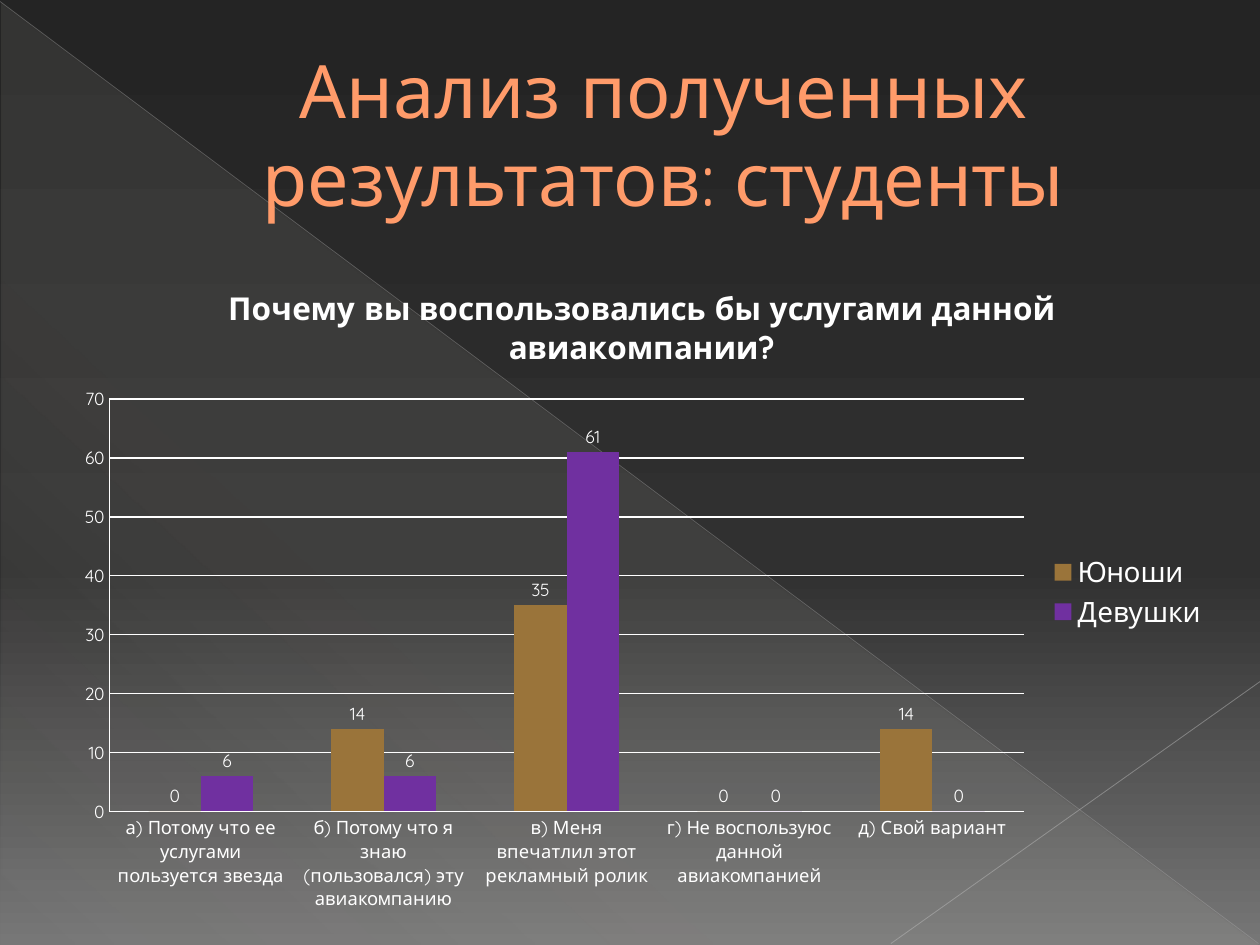
from dataclasses import dataclass

from lxml.etree import SubElement
from pptx import Presentation
from pptx.chart.data import CategoryChartData
from pptx.dml.color import RGBColor
from pptx.enum.chart import XL_CHART_TYPE as ChartType
from pptx.enum.chart import XL_LABEL_POSITION as LabelPosition
from pptx.enum.chart import XL_LEGEND_POSITION as LegendPosition
from pptx.enum.chart import XL_TICK_MARK as TickMark
from pptx.enum.shapes import MSO_CONNECTOR as Connector
from pptx.enum.shapes import MSO_SHAPE as Shape
from pptx.enum.text import MSO_ANCHOR as Anchor
from pptx.enum.text import MSO_AUTO_SIZE as AutoSize
from pptx.enum.text import PP_ALIGN as Align
from pptx.oxml.ns import qn
from pptx.util import Cm, Pt


@dataclass(frozen=True)
class Theme:
    """Colours, font and type sizes of the slide."""

    font: str = "Quicksand"
    title: str = "FF9B6A"
    title_outline: str = "A65806"
    text: str = "FFFFFF"
    beam: str = "E3DED1"
    title_size: float = 42
    chart_title_size: float = 18
    legend_size: float = 16
    category_size: float = 10.5
    chart_size: float = 10


THEME = Theme()
BACKGROUND = [(0, "242424", 100), (60, "303030", 100), (100, "767676", 100)]
BEAM = [(0, THEME.beam, 10), (70, THEME.beam, 8), (100, THEME.beam, 1)]
RAYS = [
    ((0, 0.03), (25.37, 19.02), "B6B6B6", 0.39, 35),
    ((25.4, 13.74), (17.96, 19.02), "BFBFBF", 0.47, 45),
]
CATEGORIES = [
    "а) Потому что ее услугами пользуется звезда",
    "б) Потому что я знаю (пользовался) эту авиакомпанию",
    "в) Меня впечатлил этот рекламный ролик",
    "г) Не воспользуюс данной авиакомпанией",
    "д) Свой вариант",
]
SERIES = [
    ("Юноши", (0, 14, 35, 0, 14), "9A743A"),
    ("Девушки", (6, 6, 61, 0, 0), "7030A0"),
]
PLOT_AREA = {"x": 0.04, "y": 0.21, "w": 0.79, "h": 0.62}


def set_attributes(target, values):
    """Set every named value on the target."""
    for name, value in values.items():
        setattr(target, name, value)


def format_font(font, size, color=THEME.text, bold=False):
    """Give a font the theme typeface, a size and a colour."""
    set_attributes(font, {"name": THEME.font, "size": Pt(size), "bold": bold})
    font.color.rgb = RGBColor.from_string(color)


def set_alpha(color_element, percent):
    """Set the opacity of a colour element."""
    SubElement(color_element, qn("a:alpha"), val=str(percent * 1000))


def apply_gradient(fill, element, stops, angle):
    """Fill the element with a linear gradient of position, colour, opacity stops."""
    fill.gradient()
    gradient = element.xpath(".//a:gradFill")[0]
    for child in list(gradient):
        gradient.remove(child)
    stop_list = SubElement(gradient, qn("a:gsLst"))
    for position, color, opacity in stops:
        stop = SubElement(stop_list, qn("a:gs"), pos=str(position * 1000))
        set_alpha(SubElement(stop, qn("a:srgbClr"), val=color), opacity)
    SubElement(gradient, qn("a:lin"), ang=str(angle * 60000), scaled="0")


def add_beam(slide):
    """Add the translucent triangle behind the content."""
    beam = slide.shapes.add_shape(
        Shape.RIGHT_TRIANGLE, Cm(0.03), Cm(0.05), Cm(25.35), Cm(19)
    )
    beam.shadow.inherit = False
    beam.line.fill.background()
    apply_gradient(beam.fill, beam.element, BEAM, 133)


def add_ray(slide, start, end, color, width, opacity):
    """Add a thin translucent line."""
    ray = slide.shapes.add_connector(
        Connector.STRAIGHT, *(Cm(value) for value in (*start, *end))
    )
    ray.line.width = Pt(width)
    ray.line.color.rgb = RGBColor.from_string(color)
    set_alpha(ray.element.xpath(".//a:srgbClr")[0], opacity)
    SubElement(ray.element.spPr, qn("a:effectLst"))


def format_title(slide, text):
    """Place the title in front of the decoration and format it."""
    title = slide.shapes.title
    title.element.getparent().append(title.element)
    set_attributes(
        title,
        {"left": Cm(1.27), "top": Cm(0.74), "width": Cm(22.86), "height": Cm(3.89)},
    )
    set_attributes(
        title.text_frame,
        {
            "text": text,
            "word_wrap": True,
            "auto_size": AutoSize.NONE,
            "vertical_anchor": Anchor.MIDDLE,
        },
    )
    paragraph = title.text_frame.paragraphs[0]
    paragraph.alignment = Align.CENTER
    set_attributes(paragraph.paragraph_format if hasattr(paragraph, "paragraph_format")
                   else paragraph, {"space_before": Pt(0)})
    properties = paragraph.runs[0].font
    format_font(properties, THEME.title_size, THEME.title)
    paragraph_properties = paragraph.runs[0].font and title.element.xpath(".//a:pPr")[0]
    paragraph_properties.set("marL", str(Cm(1.35)))
    paragraph_properties.set("indent", "0")
    run_properties = title.element.xpath(".//a:r/a:rPr")[0]
    outline = SubElement(run_properties, qn("a:ln"), w=str(Pt(0.5)))
    run_properties.insert(0, outline)
    outline_fill = SubElement(outline, qn("a:solidFill"))
    SubElement(outline_fill, qn("a:srgbClr"), val=THEME.title_outline)


def format_axis(axis, size):
    """Give an axis white lines and labels without tick marks."""
    set_attributes(
        axis, {"major_tick_mark": TickMark.NONE, "minor_tick_mark": TickMark.NONE}
    )
    format_font(axis.tick_labels.font, size)
    axis.format.line.color.rgb = RGBColor.from_string(THEME.text)
    axis.format.line.width = Pt(0.75)


def place_plot_area(chart):
    """Fix the inner plot area as fractions of the chart."""
    plot_area = chart.element.xpath(".//c:plotArea")[0]
    for layout in plot_area.findall(qn("c:layout")):
        plot_area.remove(layout)
    layout = SubElement(plot_area, qn("c:layout"))
    plot_area.insert(0, layout)
    manual = SubElement(layout, qn("c:manualLayout"))
    settings = {"layoutTarget": "inner", "xMode": "edge", "yMode": "edge", **PLOT_AREA}
    for name, value in settings.items():
        SubElement(manual, qn(f"c:{name}"), val=str(value))


def add_survey_chart(slide, title):
    """Add the clustered column chart of the answers."""
    data = CategoryChartData()
    data.categories = CATEGORIES
    for name, values, _ in SERIES:
        data.add_series(name, values)
    chart = slide.shapes.add_chart(
        ChartType.COLUMN_CLUSTERED, Cm(1.27), Cm(5.23), Cm(23.34), Cm(13.41), data
    ).chart
    format_font(chart.font, THEME.chart_size)
    chart.chart_title.text_frame.text = title
    run = chart.chart_title.text_frame.paragraphs[0].runs[0]
    format_font(run.font, THEME.chart_title_size, bold=True)
    chart.has_legend = True
    set_attributes(
        chart.legend, {"position": LegendPosition.RIGHT, "include_in_layout": False}
    )
    format_font(chart.legend.font, THEME.legend_size)
    format_axis(chart.category_axis, THEME.category_size)
    format_axis(chart.value_axis, THEME.chart_size)
    set_attributes(
        chart.value_axis, {"minimum_scale": 0, "maximum_scale": 70, "major_unit": 10}
    )
    gridlines = chart.value_axis.major_gridlines.format.line
    gridlines.color.rgb = RGBColor.from_string(THEME.text)
    gridlines.width = Pt(0.75)
    plot = chart.plots[0]
    set_attributes(plot, {"gap_width": 150, "overlap": 0, "vary_by_categories": False})
    for series, (_, _, color) in zip(plot.series, SERIES):
        series.format.fill.solid()
        series.format.fill.fore_color.rgb = RGBColor.from_string(color)
        labels = series.data_labels
        set_attributes(
            labels, {"show_value": True, "position": LabelPosition.OUTSIDE_END}
        )
        format_font(labels.font, THEME.chart_size)
    place_plot_area(chart)


def main():
    """Build the slide and save the presentation."""
    presentation = Presentation()
    set_attributes(presentation, {"slide_width": Cm(25.4), "slide_height": Cm(19.05)})
    slide = presentation.slides.add_slide(presentation.slide_layouts[5])
    apply_gradient(slide.background.fill, slide.element, BACKGROUND, 90)
    add_beam(slide)
    for ray in RAYS:
        add_ray(slide, *ray)
    format_title(slide, "Анализ полученных результатов: студенты")
    add_survey_chart(slide, "Почему вы воспользовались бы услугами данной авиакомпании?")
    presentation.save("out.pptx")


if __name__ == "__main__":
    main()
